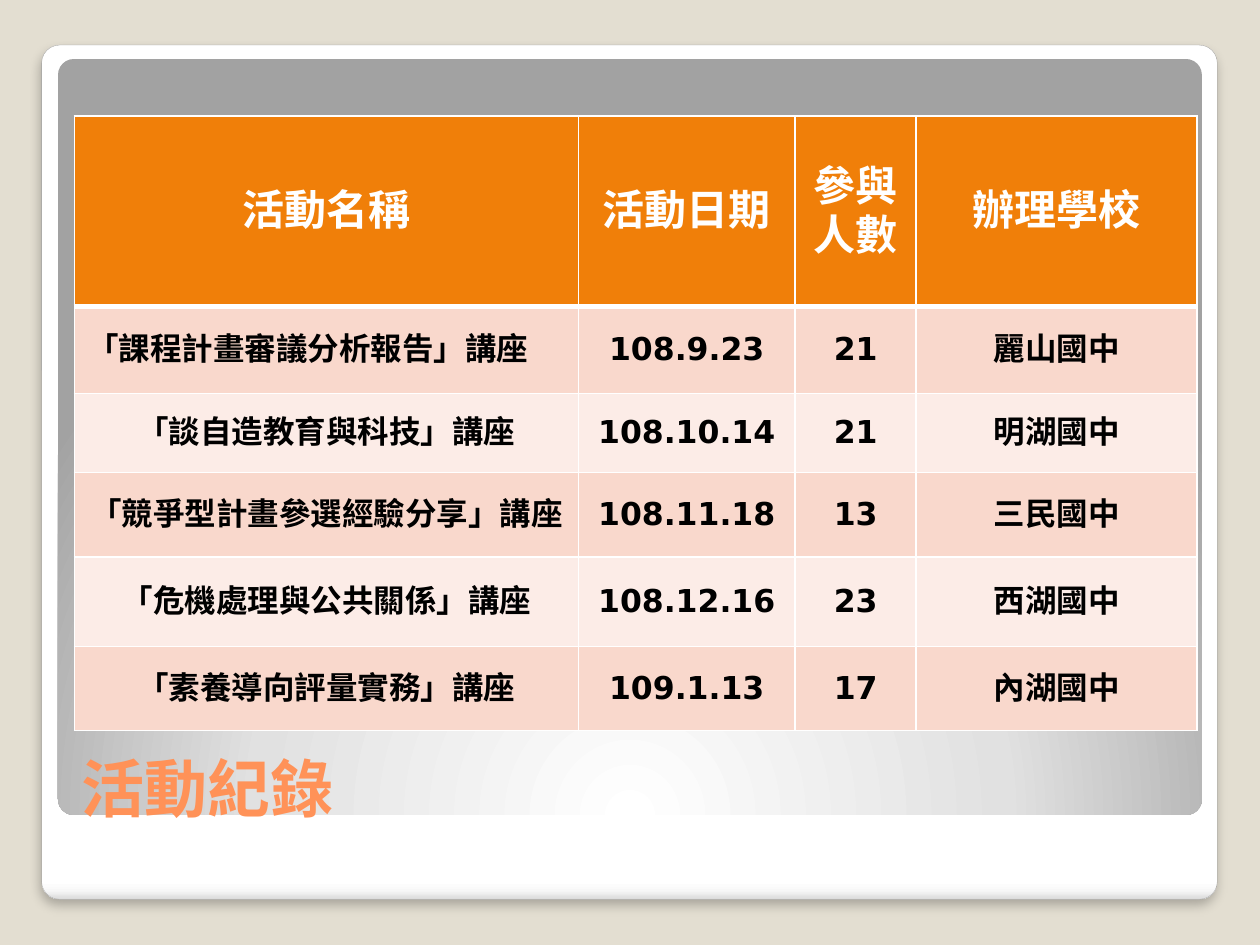
from pptx import Presentation
from pptx.dml.color import RGBColor
from pptx.enum.shapes import MSO_SHAPE
from pptx.enum.text import MSO_ANCHOR, PP_ALIGN
from pptx.oxml import parse_xml
from pptx.oxml.ns import nsdecls
from pptx.util import Cm, Pt

ROUNDED = MSO_SHAPE.ROUNDED_RECTANGLE
LEFT, CENTER = PP_ALIGN.LEFT, PP_ALIGN.CENTER
MIDDLE, BOTTOM = MSO_ANCHOR.MIDDLE, MSO_ANCHOR.BOTTOM
FONT = "DejaVu Sans"
HEADER_FILL = "F07F09"
BAND_FILLS = ("F9D8CC", "FCECE7")
COLUMN_WIDTHS = (10.16, 4.37, 2.44, 5.66)
ROW_HEIGHTS = (3.84, 1.75, 1.6, 1.7, 1.8, 1.7)
ACTIVITIES = (
    ("活動名稱", "活動日期", "參與人數", "辦理學校"),
    ("「課程計畫審議分析報告」講座", "108.9.23", "21", "麗山國中"),
    ("「談自造教育與科技」講座", "108.10.14", "21", "明湖國中"),
    ("「競爭型計畫參選經驗分享」講座", "108.11.18", "13", "三民國中"),
    ("「危機處理與公共關係」講座", "108.12.16", "23", "西湖國中"),
    ("「素養導向評量實務」講座", "109.1.13", "17", "內湖國中"),
)


def color(value):
    return RGBColor.from_string(value)


def element(tag, inner, attributes=""):
    return parse_xml(f'<a:{tag} {nsdecls("a")} {attributes}>{inner}</a:{tag}>')


def add_panel(page, left, top, width, height, stops, direction):
    panel = page.shapes.add_shape(ROUNDED, Cm(left), Cm(top), Cm(width), Cm(height))
    panel.adjustments[0] = 0.021
    panel.shadow.inherit = False
    stop_list = "".join(
        f'<a:gs pos="{percent * 1000}"><a:srgbClr val="{value}"/></a:gs>'
        for percent, value in stops
    )
    gradient = element("gradFill", f"<a:gsLst>{stop_list}</a:gsLst>{direction}")
    panel._element.spPr.insert(2, gradient)
    panel.line.fill.background()
    return panel


def add_shadow(panel):
    shadow = element(
        "outerShdw",
        '<a:srgbClr val="000000"><a:alpha val="25000"/></a:srgbClr>',
        f'blurRad="{Pt(6)}" dist="{Pt(4)}" dir="5400000" algn="t" rotWithShape="0"',
    )
    panel._element.spPr.effectLst.append(shadow)


def write_text(frame, text, size, text_color, alignment):
    frame.text = text
    para = frame.paragraphs[0]
    para.alignment = alignment
    for span in para.runs:
        span.font.name = FONT
        span.font.size = Pt(size)
        span.font.bold = True
        span.font.color.rgb = color(text_color)
        span.font._element.append(element("ea", "", f'typeface="{FONT}"'))


def add_title(page, text):
    box = page.shapes.add_textbox(Cm(1.4), Cm(13.84), Cm(22.73), Cm(2.92))
    box.text_frame.word_wrap = True
    box.text_frame.vertical_anchor = BOTTOM
    write_text(box.text_frame, text, 36, "FF9258", LEFT)


def set_borders(cell, top_width, bottom_width):
    widths = {"lnL": 1, "lnR": 1, "lnT": top_width, "lnB": bottom_width}
    for side, width in widths.items():
        line = element(
            side,
            '<a:solidFill><a:srgbClr val="FFFFFF"/></a:solidFill>',
            f'w="{Pt(width)}"',
        )
        cell._tc.get_or_add_tcPr().append(line)


def format_cell(cell, text, row, column):
    is_header = row == 0
    set_borders(cell, 3 if row == 1 else 1, 3 if is_header else 1)
    cell.fill.solid()
    cell.fill.fore_color.rgb = color(HEADER_FILL if is_header else BAND_FILLS[(row - 1) % 2])
    cell.vertical_anchor = MIDDLE
    alignment = LEFT if (row, column) == (1, 0) else CENTER
    size, text_color = (24, "FFFFFF") if is_header else (18, "000000")
    write_text(cell.text_frame, text, size, text_color, alignment)


def add_activity_table(page):
    frame = page.shapes.add_table(
        len(ROW_HEIGHTS), len(COLUMN_WIDTHS), Cm(1.5), Cm(2.34),
        Cm(sum(COLUMN_WIDTHS)), Cm(sum(ROW_HEIGHTS)),
    )
    table = frame.table
    for column, width in zip(table.columns, COLUMN_WIDTHS):
        column.width = Cm(width)
    for row, height in zip(table.rows, ROW_HEIGHTS):
        row.height = Cm(height)
    for row, texts in enumerate(ACTIVITIES):
        for column, text in enumerate(texts):
            format_cell(table.cell(row, column), text, row, column)


def main():
    deck = Presentation()
    deck.slide_width, deck.slide_height = Cm(25.4), Cm(19.05)
    page = deck.slides.add_slide(deck.slide_layouts[6])
    page.background.fill.solid()
    page.background.fill.fore_color.rgb = color("E3DED1")

    card = add_panel(
        page, 0.84, 0.91, 23.7, 17.22,
        ((0, "FFFFFF"), (98, "FFFFFF"), (99, "F7F7F7"), (100, "DADADA")),
        '<a:lin ang="5400000" scaled="0"/>',
    )
    card.line.color.rgb = color("A4A4A4")
    card.line.width = Pt(0.16)
    add_shadow(card)
    add_panel(
        page, 1.17, 1.19, 23.06, 15.24,
        ((0, "FFFFFF"), (55, "E1E1E1"), (100, "A2A2A2")),
        '<a:path path="circle">'
        '<a:fillToRect l="50000" t="175000" r="50000" b="-75000"/></a:path>',
    )
    add_title(page, "活動紀錄")
    add_activity_table(page)
    deck.save("out.pptx")


if __name__ == "__main__":
    main()
